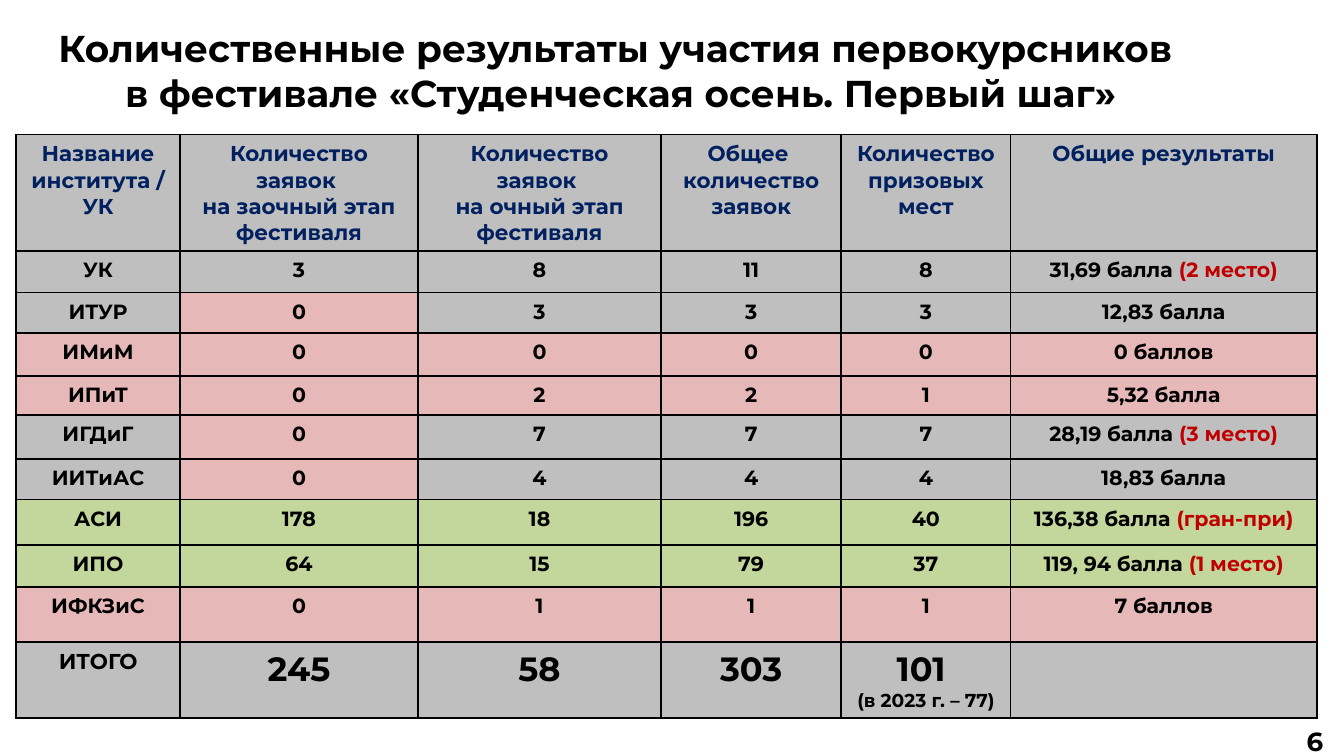
from dataclasses import dataclass

from lxml.etree import SubElement
from pptx import Presentation
from pptx.dml.color import RGBColor
from pptx.enum.text import MSO_ANCHOR, MSO_AUTO_SIZE, PP_ALIGN
from pptx.oxml.ns import qn
from pptx.util import Inches, Pt


@dataclass(frozen=True)
class Theme:
    font: str = "Montserrat"
    black: str = "000000"
    navy: str = "002060"
    red: str = "C00000"
    gray: str = "BFBFBF"
    pink: str = "E6B9B8"
    green: str = "C3D69B"
    title_size: float = 20
    page_size: float = 14
    header_size: float = 11.5
    body_size: float = 11
    total_size: float = 18
    note_size: float = 10
    border_width: float = 1


THEME = Theme()

TITLE = [
    "Количественные результаты участия первокурсников ",
    "в фестивале «Студенческая осень. Первый шаг»",
]
HEADERS = [
    ["Название института / УК"],
    ["Количество заявок ", "на заочный этап фестиваля"],
    ["Количество заявок ", "на очный этап фестиваля"],
    ["Общее ", "количество заявок"],
    ["Количество призовых мест"],
    ["Общие результаты"],
]
# Institute, remote entries, on-site entries, prizes, score, award, row fill
RESULTS = [
    ("УК", 3, 8, 8, "31,69 балла ", "(2 место)", THEME.gray),
    ("ИТУР", 0, 3, 3, "12,83 балла", "", THEME.gray),
    ("ИМиМ", 0, 0, 0, "0 баллов", "", THEME.pink),
    ("ИПиТ", 0, 2, 1, "5,32 балла", "", THEME.pink),
    ("ИГДиГ", 0, 7, 7, "28,19 балла ", "(3 место)", THEME.gray),
    ("ИИТиАС", 0, 4, 4, "18,83 балла", "", THEME.gray),
    ("АСИ", 178, 18, 40, "136,38 балла ", "(гран-при)", THEME.green),
    ("ИПО", 64, 15, 37, "119, 94 балла ", "(1 место)", THEME.green),
    ("ИФКЗиС", 0, 1, 1, "7 баллов", "", THEME.pink),
]
COLUMN_WIDTHS = [1.22, 1.77, 1.81, 1.34, 1.26, 2.28]
ROW_HEIGHTS = [0.82, 0.31, 0.3, 0.32, 0.29, 0.33, 0.3, 0.34, 0.31, 0.41, 0.41]


def write(frame, paragraphs):
    """Fill a text frame; each paragraph is a list of (text, size, color) spans."""
    for index, spans in enumerate(paragraphs):
        para = frame.add_paragraph() if index else frame.paragraphs[0]
        para.alignment = PP_ALIGN.CENTER
        for text, size, color in spans:
            span = para.add_run()
            span.text = text
            span.font.name = THEME.font
            span.font.size = Pt(size)
            span.font.bold = True
            span.font.color.rgb = RGBColor.from_string(color)


def add_title(slide):
    title = slide.shapes.title
    title.left, title.top = Inches(0.13), Inches(0.14)
    title.width, title.height = Inches(8.98), Inches(0.77)
    frame = title.text_frame
    frame.word_wrap = True
    frame.auto_size = MSO_AUTO_SIZE.SHAPE_TO_FIT_TEXT
    frame.vertical_anchor = MSO_ANCHOR.TOP
    write(frame, [[(line, THEME.title_size, THEME.black)] for line in TITLE])


def add_page_number(slide, number):
    box = slide.shapes.add_textbox(Inches(9.57), Inches(5.35), Inches(0.43), Inches(0.29))
    box.text_frame.word_wrap = True
    write(box.text_frame, [[(number, THEME.page_size, THEME.black)]])


def outline(cell):
    properties = cell._tc.get_or_add_tcPr()
    for side in ("a:lnL", "a:lnR", "a:lnT", "a:lnB"):
        line = SubElement(properties, qn(side), w=str(Pt(THEME.border_width)))
        fill = SubElement(line, qn("a:solidFill"))
        SubElement(fill, qn("a:srgbClr"), val=THEME.black)


def fill_cell(cell, paragraphs, color):
    outline(cell)
    cell.fill.solid()
    cell.fill.fore_color.rgb = RGBColor.from_string(color)
    write(cell.text_frame, paragraphs)


def body_text(value):
    return [[(str(value), THEME.body_size, THEME.black)]]


def header_row():
    return [
        ([[(line, THEME.header_size, THEME.navy)] for line in lines], THEME.gray)
        for lines in HEADERS
    ]


def result_row(name, remote, onsite, prizes, score, award, fill):
    result = body_text(score)
    if award:
        result[0].append((award, THEME.body_size, THEME.red))
    remote_fill = fill if remote else THEME.pink
    return [
        (body_text(name), fill),
        (body_text(remote), remote_fill),
        (body_text(onsite), fill),
        (body_text(remote + onsite), fill),
        (body_text(prizes), fill),
        (result, fill),
    ]


def total_row():
    remote, onsite, prizes = (sum(row[i] for row in RESULTS) for i in (1, 2, 3))
    name = [[("ИТОГО", THEME.header_size, THEME.black)]]
    counts = [
        [[(text, THEME.total_size, THEME.black)]]
        for text in (str(remote), str(onsite), str(remote + onsite), f"{prizes} ")
    ]
    counts[-1].append([("(в 2023 г. – 77)", THEME.note_size, THEME.black)])
    return [(content, THEME.gray) for content in (name, *counts, [])]


def add_results_table(slide):
    rows = [header_row(), *(result_row(*row) for row in RESULTS), total_row()]
    holder = slide.shapes.add_table(
        len(rows), len(HEADERS), Inches(0.12), Inches(1), Inches(9.68), Inches(4.35)
    )
    table = holder.table
    for column, width in zip(table.columns, COLUMN_WIDTHS):
        column.width = Inches(width)
    for table_row, height, contents in zip(table.rows, ROW_HEIGHTS, rows):
        table_row.height = Inches(height)
        for cell, (paragraphs, color) in zip(table_row.cells, contents):
            fill_cell(cell, paragraphs, color)
    holder.height = Inches(4.35)


def main():
    deck = Presentation()
    deck.slide_width = Inches(10)
    deck.slide_height = Inches(10 * 9 / 16)
    slide = deck.slides.add_slide(deck.slide_layouts[5])
    add_title(slide)
    add_page_number(slide, "6")
    add_results_table(slide)
    deck.save("out.pptx")


if __name__ == "__main__":
    main()
